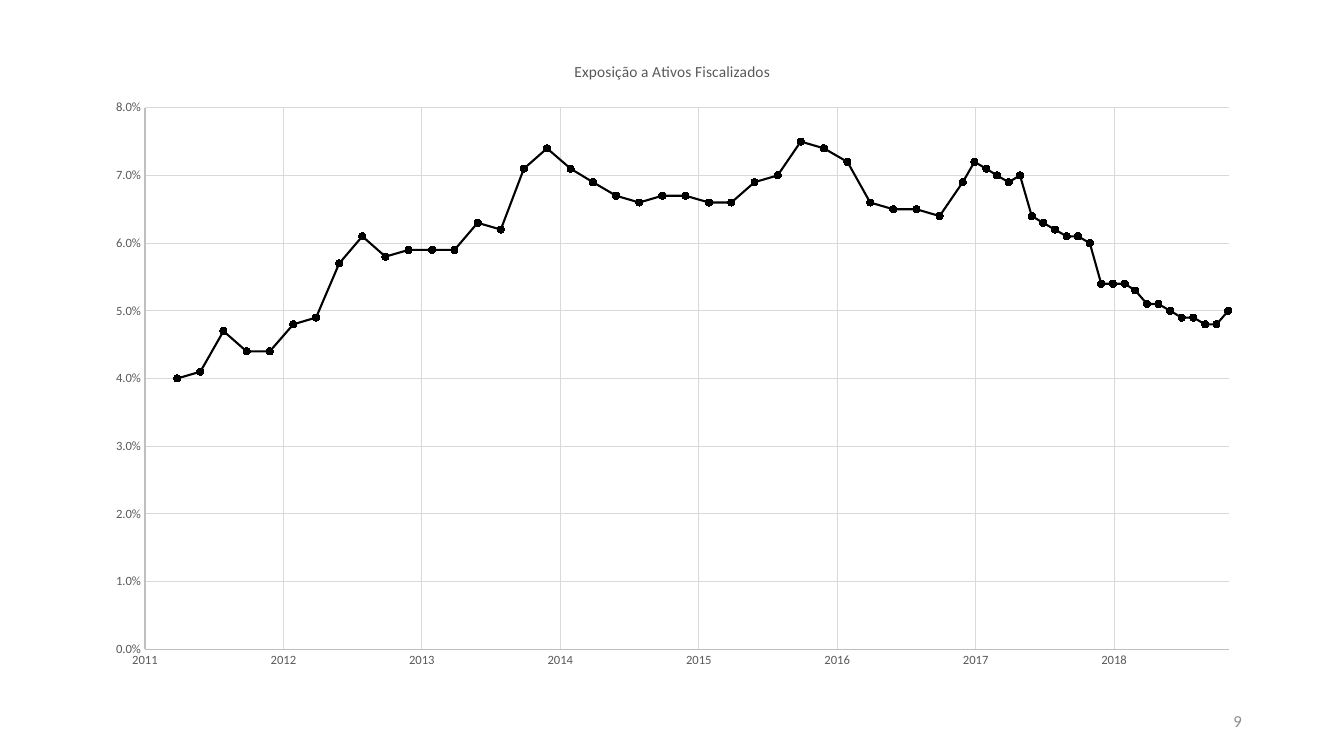
from dataclasses import dataclass
from itertools import accumulate

from pptx import Presentation
from pptx.chart.axis import ValueAxis
from pptx.chart.chart import Chart
from pptx.chart.data import XyChartData
from pptx.dml.color import RGBColor
from pptx.enum.chart import XL_CHART_TYPE as ChartType
from pptx.enum.chart import XL_MARKER_STYLE as MarkerStyle
from pptx.enum.chart import XL_TICK_MARK as TickMark
from pptx.enum.text import MSO_ANCHOR as Anchor
from pptx.enum.text import PP_ALIGN as Align
from pptx.oxml import parse_xml
from pptx.oxml.ns import nsdecls, qn
from pptx.text.text import Font
from pptx.util import Cm, Pt

FONT = "Calibri"
BLACK, DARK_GRAY, PAGE_GRAY = "000000", "595959", "8C8C8C"
AXIS_GRAY, GRID_GRAY = "BFBFBF", "D9D9D9"

# Exposure in percent: every second month to Nov 2016, then monthly
EXPOSURE = [
    4.0, 4.1, 4.7, 4.4, 4.4, 4.8, 4.9, 5.7, 6.1, 5.8, 5.9, 5.9,
    5.9, 6.3, 6.2, 7.1, 7.4, 7.1, 6.9, 6.7, 6.6, 6.7, 6.7, 6.6,
    6.6, 6.9, 7.0, 7.5, 7.4, 7.2, 6.6, 6.5, 6.5, 6.4, 6.9, 7.2,
    7.1, 7.0, 6.9, 7.0, 6.4, 6.3, 6.2, 6.1, 6.1, 6.0, 5.4, 5.4,
    5.4, 5.3, 5.1, 5.1, 5.0, 4.9, 4.9, 4.8, 4.8, 5.0,
]
FIRST_YEAR, LAST_YEAR = 2011, 2018
DAY_BEFORE_FIRST_YEAR = 40543
MONTH_LENGTHS = (31, 28, 31, 30, 31, 30, 31, 31, 30, 31, 30, 31)


@dataclass(frozen=True)
class AxisStyle:
    minimum: float
    maximum: float
    step: float
    number_format: str


DATE_AXIS = AxisStyle(40548, 43405, 365, "yyyy")
PERCENT_AXIS = AxisStyle(0, 0.08, 0.01, "0.0%")


def color(hex_value: str) -> RGBColor:
    return RGBColor.from_string(hex_value)


def format_font(font: Font, size: float, hex_value: str) -> None:
    font.name = FONT
    font.size = Pt(size)
    font.bold = False
    font.color.rgb = color(hex_value)


def reporting_dates() -> list[int]:
    """Month ends of the reports, as spreadsheet day numbers."""
    lengths = [
        days + (month == 1 and year % 4 == 0)
        for year in range(FIRST_YEAR, LAST_YEAR + 1)
        for month, days in enumerate(MONTH_LENGTHS)
    ]
    month_ends = [DAY_BEFORE_FIRST_YEAR + days for days in accumulate(lengths)]
    first, monthly_start, end = 2, 71, 94
    return month_ends[first:monthly_start:2] + month_ends[monthly_start:end]


def format_axis(axis: ValueAxis, style: AxisStyle) -> None:
    axis.minimum_scale = style.minimum
    axis.maximum_scale = style.maximum
    axis.major_unit = style.step
    axis.major_tick_mark = axis.minor_tick_mark = TickMark.NONE
    axis.has_major_gridlines = True
    for line, hex_value in (
        (axis.format.line, AXIS_GRAY),
        (axis.major_gridlines.format.line, GRID_GRAY),
    ):
        line.color.rgb = color(hex_value)
        line.width = Pt(0.75)
    labels = axis.tick_labels
    labels.number_format = style.number_format
    labels.number_format_is_linked = False
    format_font(labels.font, 9, DARK_GRAY)


def place_plot(chart: Chart, x: float, y: float, w: float, h: float) -> None:
    """Fix the inner plot area, in fractions of the chart."""
    plot_area = chart._chartSpace.find(f"{qn('c:chart')}/{qn('c:plotArea')}")
    for layout in plot_area.findall(qn("c:layout")):
        plot_area.remove(layout)
    sizes = "".join(
        f'<c:{name} val="{value}"/>'
        for name, value in (("x", x), ("y", y), ("w", w), ("h", h))
    )
    plot_area.insert(0, parse_xml(
        f'<c:layout {nsdecls("c")}><c:manualLayout><c:layoutTarget val="inner"/>'
        f'<c:xMode val="edge"/><c:yMode val="edge"/>{sizes}'
        "</c:manualLayout></c:layout>"
    ))


def add_exposure_chart(slide) -> None:
    data = XyChartData()
    points = data.add_series("Series 1")
    for date, percent in zip(reporting_dates(), EXPOSURE, strict=True):
        points.add_data_point(date, round(percent / 100, 3))
    chart = slide.shapes.add_chart(
        ChartType.XY_SCATTER_SMOOTH,
        Cm(2.34), Cm(1.02), Cm(29.21), Cm(16.15), data,
    ).chart
    format_font(chart.font, 10, BLACK)
    chart.has_legend = False
    chart.has_title = True
    title = chart.chart_title
    title.include_in_layout = False
    paragraph = title.text_frame.paragraphs[0]
    run = paragraph.add_run()
    run.text = "Exposição a Ativos Fiscalizados"
    format_font(run.font, 11, DARK_GRAY)

    chart.plots[0].vary_by_categories = False
    series = chart.plots[0].series[0]
    series.smooth = True
    series.format.line.color.rgb = color(BLACK)
    series.format.line.width = Pt(1.5)
    marker = series.marker
    marker.style = MarkerStyle.CIRCLE
    marker.size = 5
    marker.format.fill.solid()
    marker.format.fill.fore_color.rgb = color(BLACK)
    marker.format.line.color.rgb = color(BLACK)

    format_axis(chart.category_axis, DATE_AXIS)
    format_axis(chart.value_axis, PERCENT_AXIS)
    place_plot(chart, x=0.045, y=0.105, w=0.935, h=0.845)


def add_text(
    slide, text: str, *, left: float, top: float, width: float, height: float,
    size: float, hex_value: str, align: Align,
) -> None:
    box = slide.shapes.add_textbox(Cm(left), Cm(top), Cm(width), Cm(height))
    frame = box.text_frame
    frame.word_wrap = True
    frame.vertical_anchor = Anchor.MIDDLE
    paragraph = frame.paragraphs[0]
    paragraph.alignment = align
    run = paragraph.add_run()
    run.text = text
    format_font(run.font, size, hex_value)


def main() -> None:
    presentation = Presentation()
    presentation.slide_width = Cm(33.87)
    presentation.slide_height = Cm(19.05)
    slide = presentation.slides.add_slide(presentation.slide_layouts[6])
    add_exposure_chart(slide)
    add_text(
        slide, "9", left=23.93, top=17.65, width=7.62, height=1.02,
        size=12, hex_value=PAGE_GRAY, align=Align.RIGHT,
    )
    presentation.save("out.pptx")


if __name__ == "__main__":
    main()
